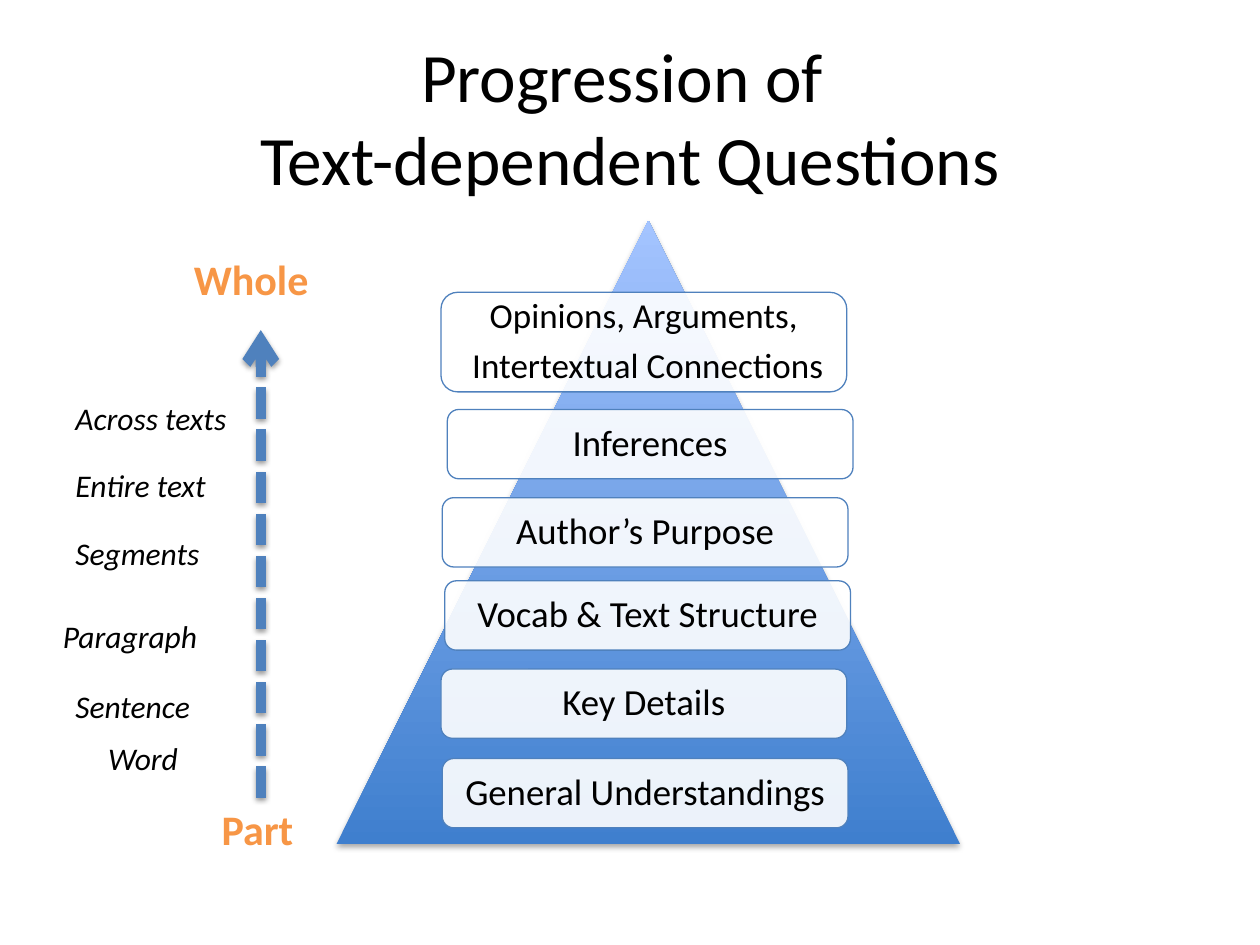
from lxml import etree
from pptx import Presentation
from pptx.dml.color import RGBColor
from pptx.enum.dml import MSO_LINE
from pptx.enum.shapes import MSO_CONNECTOR, MSO_SHAPE
from pptx.enum.text import MSO_ANCHOR, MSO_AUTO_SIZE, PP_ALIGN
from pptx.oxml.ns import qn
from pptx.util import Inches, Pt

TRIANGLE = MSO_SHAPE.ISOSCELES_TRIANGLE
ROUNDED = MSO_SHAPE.ROUNDED_RECTANGLE
STRAIGHT = MSO_CONNECTOR.STRAIGHT
DASH = MSO_LINE.SQUARE_DOT
MIDDLE, TOP = MSO_ANCHOR.MIDDLE, MSO_ANCHOR.TOP
CENTER, LEFT = PP_ALIGN.CENTER, PP_ALIGN.LEFT
NO_FIT = MSO_AUTO_SIZE.NONE

FONT = "Calibri"
BLACK = RGBColor(0x00, 0x00, 0x00)
WHITE = RGBColor(0xFF, 0xFF, 0xFF)
BLUE = RGBColor(0x4F, 0x81, 0xBD)
DEEP_BLUE = RGBColor(0x3F, 0x7F, 0xCE)
PALE_BLUE = RGBColor(0xA4, 0xC4, 0xFF)
ORANGE = RGBColor(0xF7, 0x96, 0x46)

LEVELS = [
    (0.83, 0.57, 0.79, 20, "Opinions, Arguments,\n Intertextual Connections"),
    (0.88, 1.50, 0.55, 21, "Inferences"),
    (0.84, 2.20, 0.55, 21, "Author’s Purpose"),
    (0.86, 2.86, 0.55, 21, "Vocab & Text Structure"),
    (0.83, 3.56, 0.55, 21, "Key Details"),
    (0.84, 4.27, 0.55, 21, "General Understandings"),
]
SCOPES = [
    (0.10, 1.16, "Across texts"),
    (0.10, 1.69, "Entire text"),
    (0.10, 2.23, "Segments"),
    (0.00, 2.89, "Paragraph"),
    (0.10, 3.44, "Sentence"),
    (0.36, 3.86, "Word"),
]
ENDS = [(1.04, 0, 1.23, "Whole"), (1.26, 4.37, 0.82, "Part")]


def write_text(shape, text, size, color=BLACK, bold=False, italic=False,
               align=LEFT, anchor=TOP, line_spacing=None, space_after=None):
    frame = shape.text_frame
    frame.word_wrap = True
    frame.auto_size = NO_FIT
    frame.vertical_anchor = anchor
    frame.text = text
    for paragraph in frame.paragraphs:
        paragraph.alignment = align
        paragraph.line_spacing = line_spacing
        paragraph.space_after = space_after
        for run in paragraph.runs:
            font = run.font
            font.name = FONT
            font.size = Pt(size)
            font.bold = bold
            font.italic = italic
            font.color.rgb = color


def add_child(parent, tag, **attributes):
    child = etree.SubElement(parent, qn(tag))
    for name, value in attributes.items():
        child.set(name, str(value))
    return child


def add_shadow(shape, distance, opacity):
    effects = add_child(shape._element.spPr, "a:effectLst")
    shadow = add_child(effects, "a:outerShdw", blurRad=Pt(3.1), dist=Pt(distance),
                       dir=90 * 60000, rotWithShape=0)
    color = add_child(shadow, "a:srgbClr", val=BLACK)
    add_child(color, "a:alpha", val=opacity * 1000)


def add_title(slide, left, top, width, height):
    title = slide.shapes.title
    title.left, title.top, title.width, title.height = left, top, width, height
    write_text(title, "Progression of \vText-dependent Questions", 39.6,
               align=CENTER, anchor=MIDDLE)


def add_level(slide, left, top, width, height, text, size):
    level = slide.shapes.add_shape(ROUNDED, left, top, width, height)
    level.shadow.inherit = False
    level.fill.solid()
    level.fill.fore_color.rgb = WHITE
    color = level._element.spPr.find(qn("a:solidFill"))[0]
    add_child(color, "a:alpha", val=90000)
    level.line.color.rgb = BLUE
    level.line.width = Pt(0.75)
    write_text(level, text, size, align=CENTER, anchor=MIDDLE,
               line_spacing=0.9, space_after=Pt(size * 0.35))


def add_pyramid(slide, left, top, side):
    triangle = slide.shapes.add_shape(TRIANGLE, left, top, side, side)
    triangle.fill.gradient()
    triangle.fill.gradient_angle = 90
    for stop, color in zip(triangle.fill.gradient_stops, (DEEP_BLUE, PALE_BLUE)):
        stop.color.rgb = color
    triangle.line.fill.background()
    add_shadow(triangle, 1.8, 35)
    for x, y, height, size, text in LEVELS:
        add_level(slide, left + Inches(x), top + Inches(y),
                  Inches(3.22), Inches(height), text, size)


def add_scale_arrow(slide, x, bottom, top):
    arrow = slide.shapes.add_connector(STRAIGHT, x, bottom, x, top)
    arrow.line.color.rgb = BLUE
    arrow.line.width = Pt(6)
    arrow.line.dash_style = DASH
    add_child(arrow.line._get_or_add_ln(), "a:tailEnd", type="arrow")
    add_shadow(arrow, 1.6, 38)


def add_label(slide, left, top, width, height, text, size, **text_format):
    label = slide.shapes.add_textbox(left, top, width, height)
    write_text(label, text, size, **text_format)


def add_scale(slide, left, top):
    add_scale_arrow(slide, left + Inches(1.67), top + Inches(4.37), top + Inches(0.66))
    for x, y, text in SCOPES:
        add_label(slide, left + Inches(x), top + Inches(y), Inches(1.5), Inches(0.4),
                  text, 18, italic=True)
    for x, y, width, text in ENDS:
        add_label(slide, left + Inches(x), top + Inches(y), Inches(width), Inches(0.5),
                  text, 24, color=ORANGE, bold=True)


def main():
    presentation = Presentation()
    presentation.slide_width = Inches(10)
    presentation.slide_height = Inches(7.5)
    slide = presentation.slides.add_slide(presentation.slide_layouts[5])
    add_title(slide, Inches(0.5), Inches(0.3), Inches(9), Inches(1.25))
    add_pyramid(slide, Inches(2.67), Inches(1.75), Inches(4.95))
    add_scale(slide, Inches(0.4), Inches(1.96))
    presentation.save("out.pptx")


if __name__ == "__main__":
    main()
